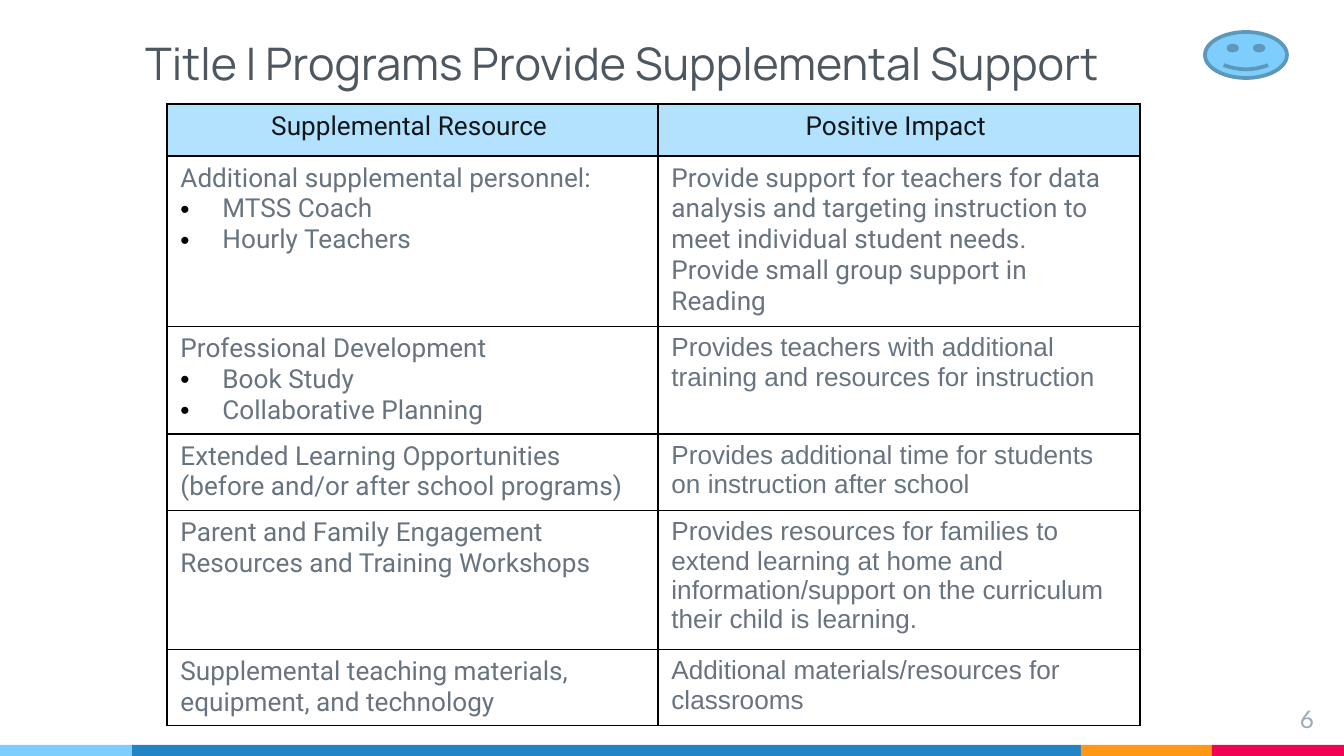
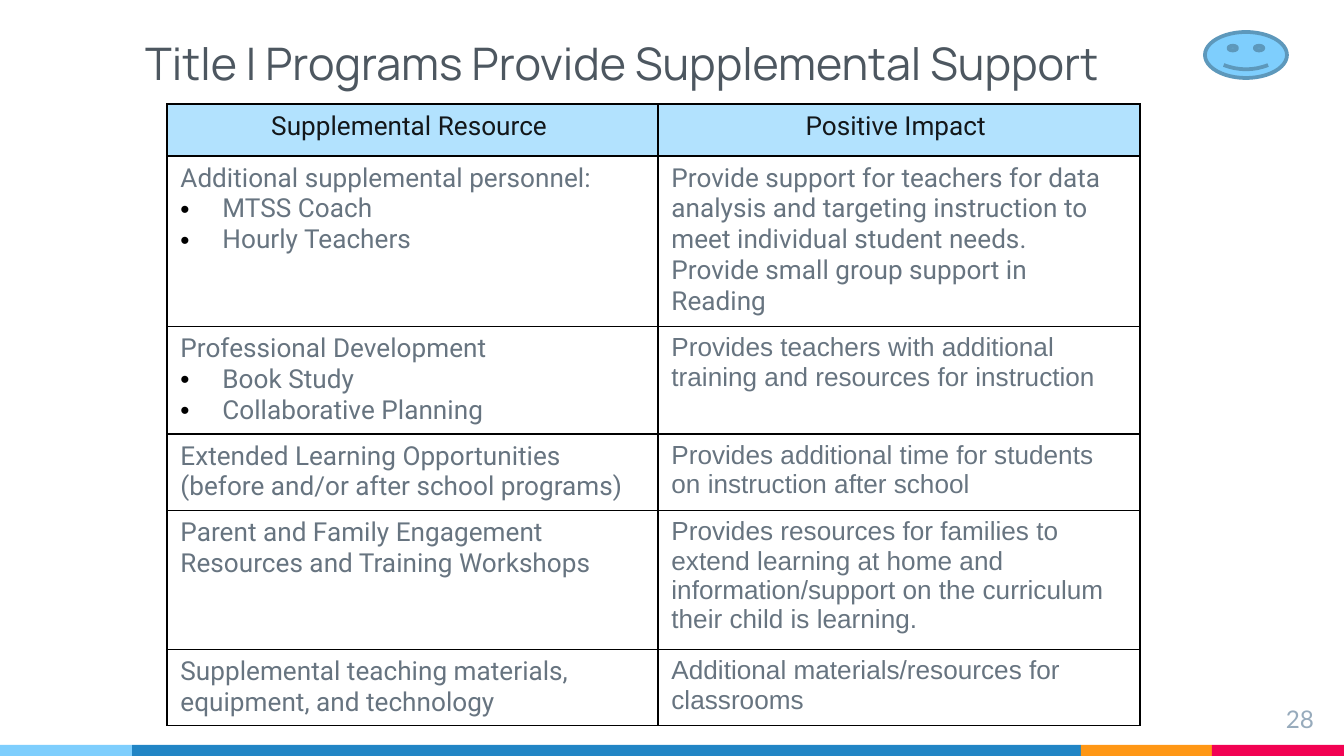
from pptx import Presentation
from pptx import util as u
from pptx.dml.color import RGBColor
from pptx.enum import shapes, text
from pptx.oxml import parse_xml
from pptx.oxml.ns import nsdecls

SKY = RGBColor(0x7E, 0xCE, 0xFD)
BLUE = RGBColor(0x21, 0x85, 0xC5)
ORANGE = RGBColor(0xFF, 0x97, 0x15)
PINK = RGBColor(0xF2, 0x02, 0x53)
PALE = RGBColor(0xB2, 0xE2, 0xFE)
OUTLINE = RGBColor(0x5D, 0x98, 0xBB)
TITLE = RGBColor(0x4D, 0x57, 0x60)
NUMBER = RGBColor(0x97, 0xAB, 0xBC)
HEAD = RGBColor(0x13, 0x17, 0x1A)
BODY = RGBColor(0x67, 0x74, 0x80)

PX = 6803.57  # EMU per px, 134.4 px to the inch
LEFT, CENTER, RIGHT = text.PP_ALIGN.LEFT, text.PP_ALIGN.CENTER, text.PP_ALIGN.RIGHT


def emu(*lengths):
    return [u.Emu(round(n * PX)) for n in lengths]


def write(p, words, align, **font):
    p.alignment = align
    r = p.add_run()
    r.text = words
    r.font.color.rgb = font.pop("color")
    for key, value in font.items():
        setattr(r.font, key, value)


# Shared content
HEADING = "Title I Programs Provide Supplemental Support"
PAGES = ["6", "28"]
BANDS = [(132, SKY), (949, BLUE), (131, ORANGE), (132, PINK)]
COLS = [491, 482]
ROW_HEIGHTS = [52, 168, 107, 74, 131, 75]
# Each cell holds its paragraphs; a leading bullet marks a list item
ROWS = [
    (["Supplemental Resource "], ["Positive Impact "]),
    (["Additional supplemental personnel:", "•MTSS Coach", "•Hourly Teachers"],
     ["Provide support for teachers for data analysis and targeting instruction "
      "to meet individual student needs.",
      "Provide small group support in Reading"]),
    (["Professional Development", "•Book Study", "•Collaborative Planning"],
     ["Provides teachers with additional training and resources for instruction"]),
    (["Extended Learning Opportunities (before and/or after school programs)"],
     ["Provides additional time for students on instruction after school"]),
    (["Parent and Family Engagement Resources and Training Workshops"],
     ["Provides resources for families to extend learning at home and "
      "information/support on the curriculum their child is learning."]),
    (["Supplemental teaching materials, equipment, and technology"],
     ["Additional materials/resources for classrooms"]),
]

prs = Presentation()
prs.slide_width, prs.slide_height = emu(1344, 756)

for page in PAGES:
    s = prs.slides.add_slide(prs.slide_layouts[6])

    # Footer bands
    x = 0
    for width, color in BANDS:
        sp = s.shapes.add_shape(shapes.MSO_SHAPE.RECTANGLE, *emu(x, 745, width, 11))
        sp.shadow.inherit = False
        sp.fill.solid()
        sp.fill.fore_color.rgb = color
        sp.line.fill.background()
        x += width

    # Title and page number
    for box, words, anchor, align, font in [
        ((132, 28, 1031, 75), HEADING, text.MSO_ANCHOR.BOTTOM, LEFT,
         dict(size=u.Pt(24), name="Manrope", color=TITLE)),
        ((1246, 691, 81, 46), page, text.MSO_ANCHOR.TOP, RIGHT,
         dict(size=u.Pt(13), name="Lato", color=NUMBER)),
    ]:
        tf = s.shapes.add_textbox(*emu(*box)).text_frame
        tf.word_wrap = True
        tf.vertical_anchor = anchor
        for side in ("left", "top", "right", "bottom"):
            setattr(tf, "margin_" + side, u.Inches(0.1))
        write(tf.paragraphs[0], words, align, **font)

    # Resource table
    table = s.shapes.add_table(len(ROWS), len(COLS),
                               *emu(167, 104, sum(COLS), sum(ROW_HEIGHTS))).table
    table.first_row = table.horz_banding = False
    for col, width in zip(table.columns, emu(*COLS)):
        col.width = width
    for row, height in zip(table.rows, emu(*ROW_HEIGHTS)):
        row.height = height
    for i, row in enumerate(ROWS):
        for j, paragraphs in enumerate(row):
            cell = table.cell(i, j)
            tcPr = cell._tc.get_or_add_tcPr()
            for edge in ("lnL", "lnR", "lnT", "lnB"):
                tcPr.append(parse_xml(
                    f'<a:{edge} {nsdecls("a")} w="9525"><a:solidFill>'
                    f'<a:srgbClr val="000000"/></a:solidFill></a:{edge}>'))
            if i == 0:
                cell.fill.solid()
                cell.fill.fore_color.rgb = PALE
            else:
                cell.fill.background()
            font = dict(size=u.Pt(14), color=BODY if i else HEAD,
                        name="Arial" if i > 1 and j == 1 else "Roboto")
            tf = cell.text_frame
            for k, words in enumerate(paragraphs):
                p = tf.add_paragraph() if k else tf.paragraphs[0]
                write(p, words.lstrip("•"), LEFT if i else CENTER, **font)
                if words.startswith("•"):
                    pPr = p._p.get_or_add_pPr()
                    indent = emu(42)[0]
                    pPr.set("marL", str(indent))
                    pPr.set("indent", str(-indent))
                    for bullet in ('buClr {}><a:srgbClr val="000000"/></a:buClr>',
                                   'buFont {} typeface="Arial"/>',
                                   'buChar {} char="•"/>'):
                        pPr.append(parse_xml("<a:" + bullet.format(nsdecls("a"))))

    # Smiley
    sp = s.shapes.add_shape(shapes.MSO_SHAPE.SMILEY_FACE, *emu(1205, 32, 82, 46))
    sp.shadow.inherit = False
    sp.fill.solid()
    sp.fill.fore_color.rgb = SKY
    sp.line.color.rgb = OUTLINE
    sp.line.width = u.Pt(2)

prs.save("out.pptx")
